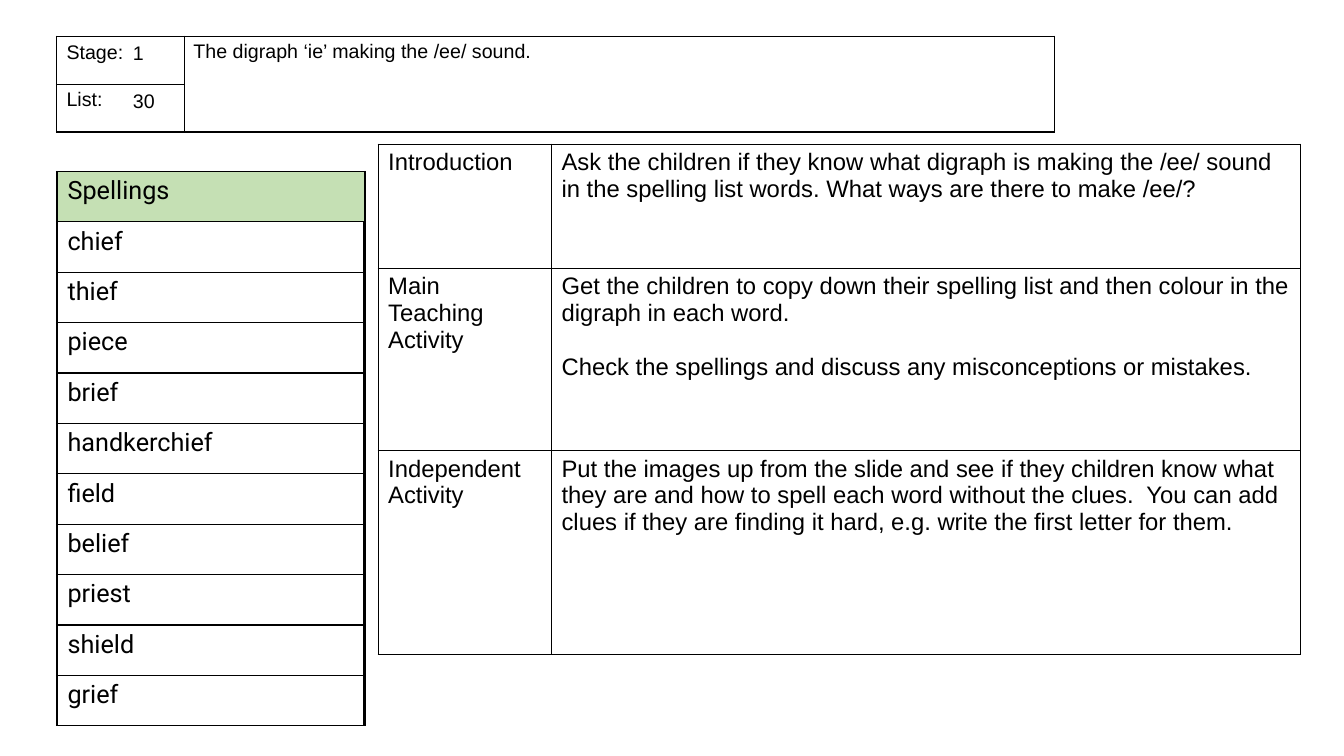
import pptx
import pptx.dml.color
import pptx.enum.shapes
import pptx.oxml
import pptx.oxml.ns
import pptx.util
from pptx.util import Inches, Pt

COLOURS = {"text": "000000", "border": "000000", "panel": "FFFFFF", "heading": "C5E0B4"}

SPELLINGS = ["chief", "thief", "piece", "brief", "handkerchief", "field",
             "belief", "priest", "shield", "grief"]

ACTIVITIES = [
    ("Introduction", [
        "Ask the children if they know what digraph is making the /ee/ sound in the "
        "spelling list words. What ways are there to make /ee/?"]),
    ("Main Teaching Activity", [
        "Get the children to copy down their spelling list and then colour in the "
        "digraph in each word.",
        "Check the spellings and discuss any misconceptions or mistakes."]),
    ("Independent Activity", [
        "Put the images up from the slide and see if they children know what they are "
        "and how to spell each word without the clues.  You can add clues if they are "
        "finding it hard, e.g. write the first letter for them."]),
]


def colour(name):
    return pptx.dml.color.RGBColor.from_string(COLOURS[name])


def write(text_frame, paragraphs, font_name, size):
    """Fill a text frame, leaving one line's gap between paragraphs."""
    text_frame.text = "\n".join(paragraphs)
    for index, paragraph in enumerate(text_frame.paragraphs):
        if index:
            paragraph.space_before = Pt(19.5)
        paragraph.font.name = font_name
        paragraph.font.size = Pt(size)
        paragraph.font.color.rgb = colour("text")


def add_borders(cell):
    properties = cell._tc.get_or_add_tcPr()
    for index, side in enumerate(("lnL", "lnR", "lnT", "lnB")):
        properties.insert(index, pptx.oxml.parse_xml(
            f'<a:{side} {pptx.oxml.ns.nsdecls("a")} w="12700"><a:solidFill>'
            f'<a:srgbClr val="{COLOURS["border"]}"/></a:solidFill></a:{side}>'))


def add_grid(slide, left, top, widths, heights):
    """Add an unfilled table with thin borders."""
    table = slide.shapes.add_table(
        len(heights), len(widths), Inches(left), Inches(top),
        Inches(sum(widths)), Inches(sum(heights))).table
    table.first_row = table.horz_banding = False
    for column, width in zip(table.columns, widths):
        column.width = Inches(width)
    for row, height in zip(table.rows, heights):
        row.height = Inches(height)
    for cell in table.iter_cells():
        cell.fill.background()
        add_borders(cell)
    return table


def add_panel(slide, left, top, width, height):
    panel = slide.shapes.add_shape(
        pptx.enum.shapes.MSO_SHAPE.RECTANGLE,
        Inches(left), Inches(top), Inches(width), Inches(height))
    panel.shadow.inherit = False
    panel.fill.solid()
    panel.fill.fore_color.rgb = colour("panel")
    panel.line.color.rgb = colour("panel")
    panel.line.width = Pt(1)
    fill_colour = panel.fill._xPr.find(".//" + pptx.oxml.ns.qn("a:srgbClr"))
    fill_colour.append(pptx.oxml.parse_xml(
        f'<a:alpha {pptx.oxml.ns.nsdecls("a")} val="90000"/>'))


def add_entry(slide, left, top, width, height, text):
    text_frame = slide.shapes.add_textbox(
        Inches(left), Inches(top), Inches(width), Inches(height)).text_frame
    text_frame.word_wrap = True
    write(text_frame, [text], "Arial", 14)
    text_frame.paragraphs[0].line_spacing = 0.9


def add_header(slide, left, top, width, height):
    label_width, row_height = 1.27, height / 2
    table = add_grid(slide, left, top, [label_width, width - label_width], [row_height] * 2)
    table.cell(0, 1).merge(table.cell(1, 1))
    for row, (label, value) in enumerate([("Stage:", "1"), ("List:", "30")]):
        write(table.cell(row, 0).text_frame, [label], "Arial", 14)
        add_entry(slide, left + 0.66, top + 0.02 + row * row_height, 0.47, 0.4, value)
    add_entry(slide, left + label_width - 0.01, top, width - label_width, height,
              "The digraph ‘ie’ making the /ee/ sound.")


def add_activities(slide, left, top, width):
    label_width = 1.72
    table = add_grid(slide, left, top, [label_width, width - label_width], [1.23, 1.81, 2.02])
    for row, (label, instructions) in enumerate(ACTIVITIES):
        write(table.cell(row, 0).text_frame, [label], "Arial", 17)
        write(table.cell(row, 1).text_frame, instructions, "Arial", 17)


def add_spellings(slide, left, top, width, height):
    """Add the word list over a slightly offset grid that thickens its rules."""
    words = ["Spellings"] + SPELLINGS
    heights = [height / len(words)] * len(words)
    add_grid(slide, left, top, [width], heights)
    table = add_grid(slide, left + 0.01, top, [width], heights)
    for row, word in enumerate(words):
        write(table.cell(row, 0).text_frame, [word], "Roboto", 18)
    heading = table.cell(0, 0)
    heading.fill.solid()
    heading.fill.fore_color.rgb = colour("heading")


def main():
    presentation = pptx.Presentation()
    presentation.slide_width = Inches(13.33)
    presentation.slide_height = Inches(7.5)
    slide = presentation.slides.add_slide(presentation.slide_layouts[6])
    add_panel(slide, 0.17, 0.15, 13, 7.22)
    add_header(slide, 0.56, 0.36, 9.9, 0.95)
    add_activities(slide, 3.75, 1.43, 9.15)
    add_spellings(slide, 0.56, 1.7, 3.05, 5.5)
    presentation.save("out.pptx")


if __name__ == "__main__":
    main()
